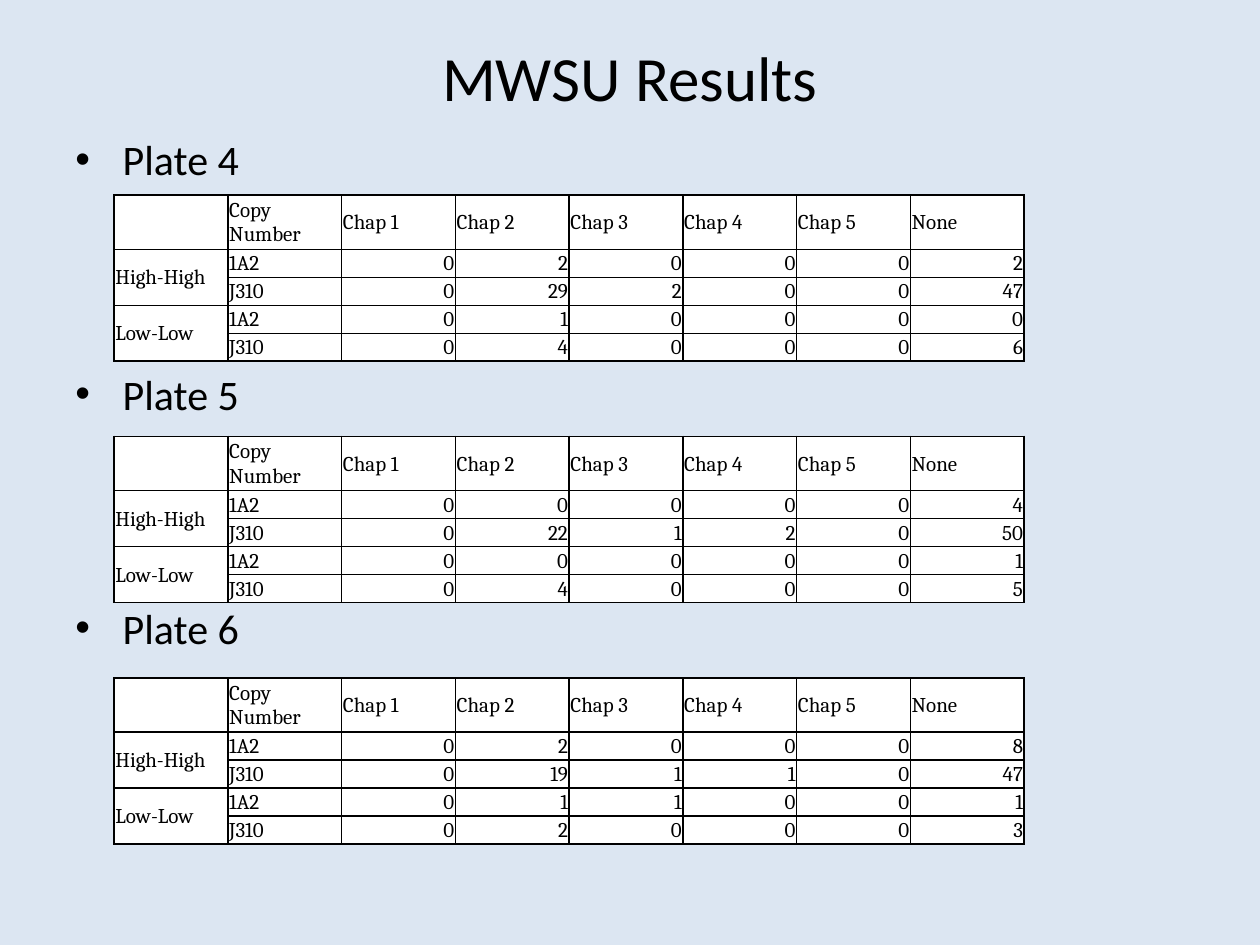
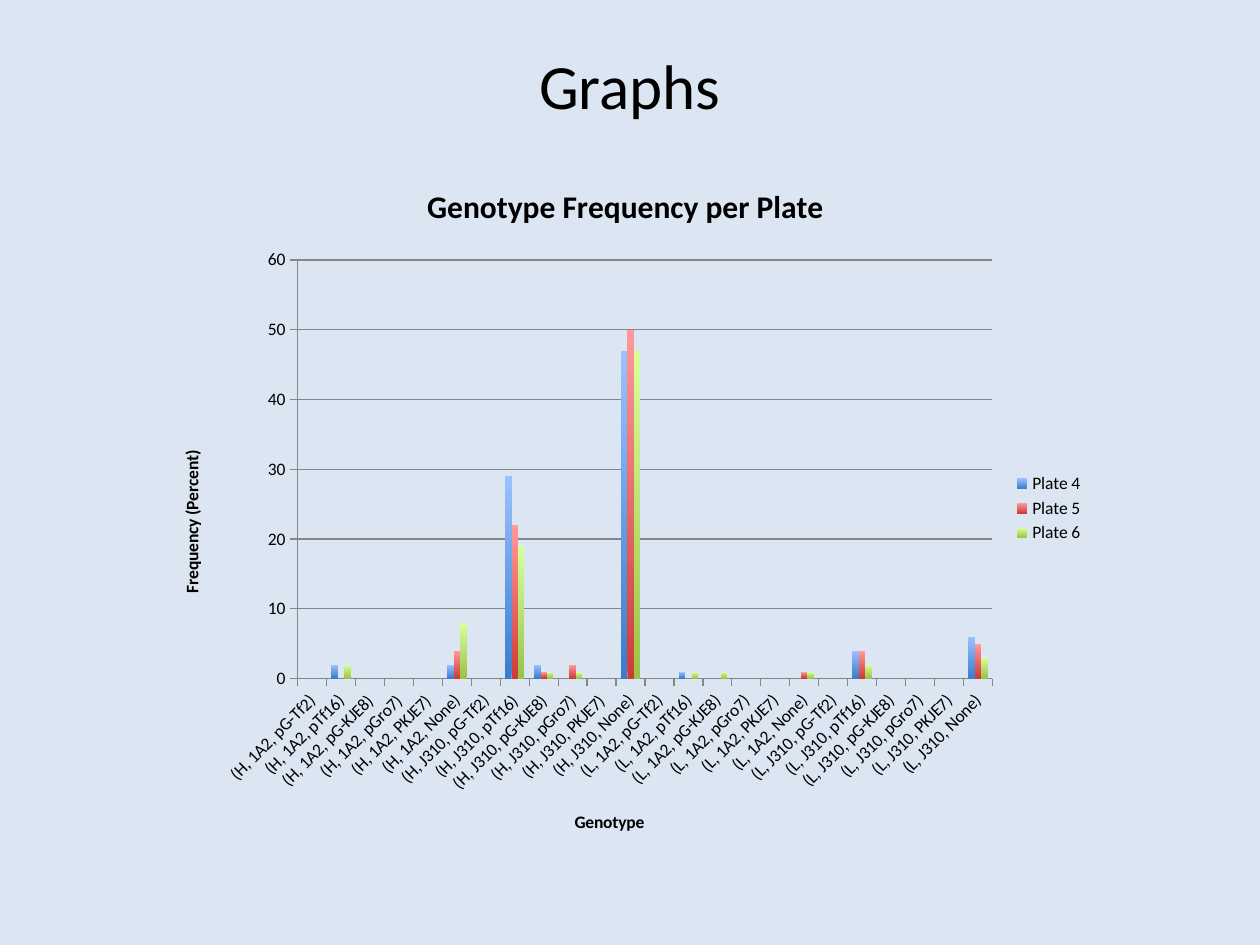
from dataclasses import dataclass
from itertools import product
from lxml.etree import SubElement
from pptx import Presentation
from pptx.chart.data import CategoryChartData
from pptx.dml.color import RGBColor
from pptx.enum.chart import XL_CHART_TYPE, XL_LEGEND_POSITION, XL_TICK_MARK
from pptx.enum.text import MSO_ANCHOR, PP_ALIGN
from pptx.oxml.ns import qn
from pptx.util import Pt


@dataclass(frozen=True)
class Theme:
    """Colours, fonts and type sizes of the deck."""
    back: str = "DCE6F2"
    ink: str = "000000"
    cell: str = "FFFFFF"
    grid: str = "868686"
    bars: tuple = (("3A7CCB", "9BC1FF"), ("CE3B37", "FF9A99"), ("9BC348", "D8FF9A"))
    sans: str = "Calibri"
    serif: str = "Cambria"
    title: int = 36
    bullet: int = 24
    head: int = 18
    table: int = 12
    label: int = 10


THEME = Theme()
HEADS = ["", "Copy Number", "Chap 1", "Chap 2", "Chap 3", "Chap 4", "Chap 5", "None"]
GROUPS = ["High-High", "Low-Low"]
GENES = ["1A2", "J310"]
VECTORS = ["pG-Tf2", "pTf16", "pG-KJE8", "pGro7", "PKJE7", "None"]
PLATES = {
    "Plate 4": [[0, 2, 0, 0, 0, 2], [0, 29, 2, 0, 0, 47],
                [0, 1, 0, 0, 0, 0], [0, 4, 0, 0, 0, 6]],
    "Plate 5": [[0, 0, 0, 0, 0, 4], [0, 22, 1, 2, 0, 50],
                [0, 0, 0, 0, 0, 1], [0, 4, 0, 0, 0, 5]],
    "Plate 6": [[0, 2, 0, 0, 0, 8], [0, 19, 1, 1, 0, 47],
                [0, 1, 1, 0, 0, 1], [0, 2, 0, 0, 0, 3]],
}


def rgb(code):
    """Turn a hex code into a colour."""
    return RGBColor.from_string(code)


def style(font, size, face=THEME.sans, bold=False):
    """Set face, size, weight and ink of a font."""
    font.name, font.size, font.bold = face, Pt(size), bold
    font.color.rgb = rgb(THEME.ink)


def add_page(deck, text, height):
    """Add a title-only slide with its title in a band of the given height."""
    page = deck.slides.add_slide(deck.slide_layouts[5])
    title = page.shapes.title
    title.left, title.top, title.width, title.height = map(Pt, (36, 21.6, 648, height))
    frame = title.text_frame
    frame.text = text
    frame.vertical_anchor = MSO_ANCHOR.MIDDLE
    para = frame.paragraphs[0]
    para.alignment = PP_ALIGN.CENTER
    style(para.font, THEME.title)
    return page


def add_bullets(page, box, items, gap):
    """Fill the box with bulleted items set a gap apart."""
    frame = page.shapes.add_textbox(*map(Pt, box)).text_frame
    frame.word_wrap = True
    for i, item in enumerate(items):
        para = frame.add_paragraph() if i else frame.paragraphs[0]
        para.text = item
        para.space_before = Pt(gap if i else 0)
        style(para.font, THEME.bullet)
        props = para._p.get_or_add_pPr()
        props.set("marL", str(Pt(27)))
        props.set("indent", str(Pt(-27)))
        SubElement(props, qn("a:buFont"), typeface="Arial")
        SubElement(props, qn("a:buChar"), char="•")


def rule_cell(cell):
    """Give a cell thin lines on all four sides."""
    props = cell._tc.get_or_add_tcPr()
    for side in "LRTB":
        line = SubElement(props, qn(f"a:ln{side}"), w=str(Pt(1)))
        fill = SubElement(line, qn("a:solidFill"))
        SubElement(fill, qn("a:srgbClr"), val=THEME.ink)


def fill_cell(cell, value):
    """Write a value into a cell, with numbers to the right."""
    rule_cell(cell)
    cell.fill.solid()
    cell.fill.fore_color.rgb = rgb(THEME.cell)
    cell.vertical_anchor = MSO_ANCHOR.MIDDLE
    cell.margin_left = cell.margin_right = cell.margin_top = Pt(0.75)
    cell.margin_bottom = 0
    cell.text = str(value)
    para = cell.text_frame.paragraphs[0]
    para.alignment = PP_ALIGN.RIGHT if isinstance(value, int) else PP_ALIGN.LEFT
    style(para.font, THEME.table, THEME.serif)


def add_counts(page, box, counts):
    """Add the table of one plate, with merged group names."""
    left, top, width, height = box
    names = product(GROUPS, GENES)
    rows = [HEADS] + [
        [group if gene == GENES[0] else "", gene, *line]
        for (group, gene), line in zip(names, counts)]
    table = page.shapes.add_table(
        len(rows), len(HEADS), Pt(left), Pt(top), Pt(width), Pt(height)).table
    table.first_row = table.horz_banding = False
    for col in table.columns:
        col.width = Pt(width / len(HEADS))
    for i, row in enumerate(rows):
        table.rows[i].height = Pt(16 if i else height - 16 * len(counts))
        for j, value in enumerate(row):
            fill_cell(table.cell(i, j), value)
    for i in range(1, len(rows), len(GENES)):
        table.cell(i, 0).merge(table.cell(i + 1, 0))


def name_part(part, text, size):
    """Give a chart or an axis a bold title."""
    frame = part.text_frame
    frame.text = text
    style(frame.paragraphs[0].font, size, bold=True)


def set_axis(axis, text):
    """Format one chart axis and its title."""
    name_part(axis.axis_title, text, THEME.label)
    axis.major_tick_mark = XL_TICK_MARK.OUTSIDE
    axis.minor_tick_mark = XL_TICK_MARK.NONE
    axis.format.line.color.rgb = rgb(THEME.grid)
    style(axis.tick_labels.font, THEME.label)


def add_graph(page, box):
    """Add the column chart of all plates."""
    data = CategoryChartData()
    data.categories = [
        f"({group[0]}, {gene}, {vector})"
        for group, gene, vector in product(GROUPS, GENES, VECTORS)]
    for plate, counts in PLATES.items():
        data.add_series(plate, sum(counts, []))
    chart = page.shapes.add_chart(
        XL_CHART_TYPE.COLUMN_CLUSTERED, *map(Pt, box), data).chart
    style(chart.font, THEME.label)
    name_part(chart.chart_title, "Genotype Frequency per Plate", THEME.head)
    chart.has_legend = True
    chart.legend.position = XL_LEGEND_POSITION.RIGHT
    chart.legend.include_in_layout = False
    set_axis(chart.category_axis, "Genotype")
    chart.category_axis._element.txPr.bodyPr.set("rot", str(-45 * 60000))
    scale = chart.value_axis
    set_axis(scale, "Frequency (Percent)")
    scale.minimum_scale, scale.maximum_scale, scale.major_unit = 0, 60, 10
    scale.major_gridlines.format.line.color.rgb = rgb(THEME.grid)
    plot = chart.plots[0]
    plot.gap_width, plot.overlap, plot.vary_by_categories = 150, 0, False
    for bar, shades in zip(plot.series, THEME.bars):
        fill = bar.format.fill
        fill.gradient()
        fill.gradient_angle = 90
        for stop, shade in zip(fill.gradient_stops, shades):
            stop.color.rgb = rgb(shade)


def add_results(deck):
    """Build the slide of plate tables."""
    page = add_page(deck, "MWSU Results", 44)
    add_bullets(page, (36, 73, 648, 426), PLATES, 105)
    for i, counts in enumerate(PLATES.values()):
        add_counts(page, (65.25, 111.5 + 137.9 * i, 520, 95), counts)


def add_graphs(deck):
    """Build the slide with the chart."""
    page = add_page(deck, "Graphs", 53.5)
    add_graph(page, (88.5, 90.5, 538, 400))


def main():
    """Build and save the deck."""
    deck = Presentation()
    deck.slide_width, deck.slide_height = Pt(720), Pt(540)
    back = deck.slide_master.background.fill
    back.solid()
    back.fore_color.rgb = rgb(THEME.back)
    add_results(deck)
    add_graphs(deck)
    deck.save("out.pptx")


if __name__ == "__main__":
    main()
